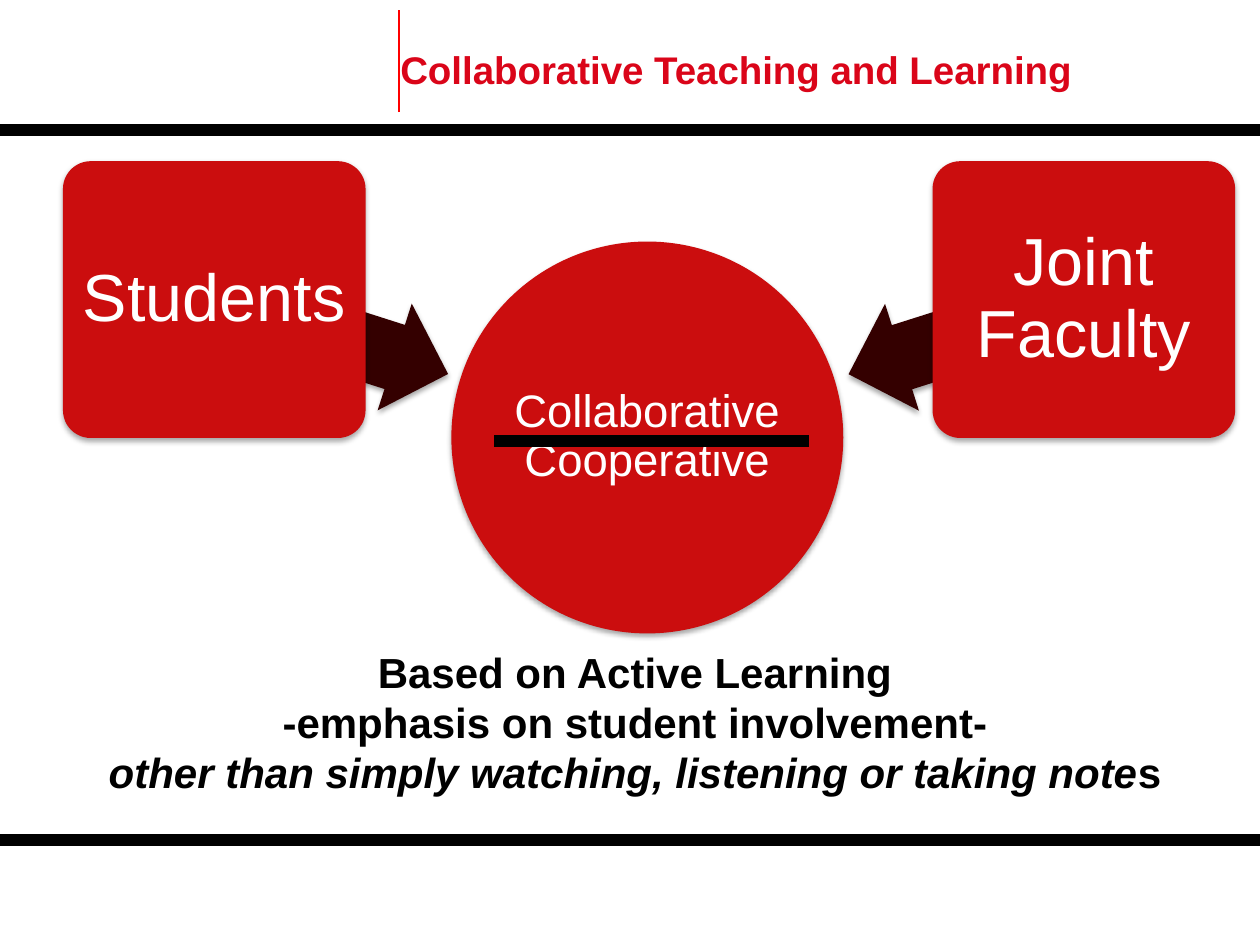
from dataclasses import dataclass

from lxml import etree
from pptx import Presentation
from pptx.dml.color import RGBColor
from pptx.enum.shapes import MSO_CONNECTOR, MSO_SHAPE
from pptx.enum.text import MSO_ANCHOR, PP_ALIGN
from pptx.oxml.ns import qn
from pptx.util import Cm, Pt

STRAIGHT = MSO_CONNECTOR.STRAIGHT
OVAL = MSO_SHAPE.OVAL
ROUND = MSO_SHAPE.ROUNDED_RECTANGLE
ARROW = MSO_SHAPE.LEFT_ARROW
LEFT, CENTER = PP_ALIGN.LEFT, PP_ALIGN.CENTER
TOP, MIDDLE, BOTTOM = MSO_ANCHOR.TOP, MSO_ANCHOR.MIDDLE, MSO_ANCHOR.BOTTOM

RED, DARK, BLACK, WHITE = "CB0D0E", "340000", "000000", "FFFFFF"


@dataclass
class Run:
    text: str
    slant: bool = False


@dataclass
class Rule:
    x1: float
    y1: float
    x2: float
    y2: float
    color: str = BLACK
    width: float = 7


@dataclass
class Node:
    kind: int
    left: float
    top: float
    width: float
    height: float
    fill: str
    adjust: tuple = ()
    turn: float = 0
    text: str = ""
    size: float = 38
    inset: float = 0.2


def paint(color: str) -> RGBColor:
    return RGBColor.from_string(color)


def effects(shape):
    return etree.SubElement(shape._element.spPr, qn("a:effectLst"))


def shade(shape) -> None:
    outer = etree.SubElement(
        effects(shape), qn("a:outerShdw"), blurRad=str(Pt(3.1)),
        dist=str(Pt(1.8)), dir="5400000", rotWithShape="0")
    tint = etree.SubElement(outer, qn("a:srgbClr"), val=BLACK)
    etree.SubElement(tint, qn("a:alpha"), val="35000")


def write(frame, lines, *, size, color, bold=False, align=CENTER,
          anchor=TOP, space=1.0, inset=None) -> None:
    frame.word_wrap = True
    frame.vertical_anchor = anchor
    if inset is not None:
        frame.margin_left = frame.margin_right = Cm(inset)
        frame.margin_top = frame.margin_bottom = Cm(inset)
    for i, line in enumerate(lines):
        para = frame.add_paragraph() if i else frame.paragraphs[0]
        para.alignment = align
        para.line_spacing = space
        for part in line:
            run = para.add_run()
            run.text = part.text
            font = run.font
            font.name, font.size = "Arial", Pt(size)
            font.bold, font.italic = bold, part.slant
            font.color.rgb = paint(color)


def draw_rule(slide, rule: Rule) -> None:
    line = slide.shapes.add_connector(
        STRAIGHT, Cm(rule.x1), Cm(rule.y1), Cm(rule.x2), Cm(rule.y2))
    line.line.color.rgb = paint(rule.color)
    line.line.width = Pt(rule.width)
    effects(line)


def draw_node(slide, node: Node) -> None:
    shape = slide.shapes.add_shape(
        node.kind, Cm(node.left), Cm(node.top), Cm(node.width), Cm(node.height))
    for i, value in enumerate(node.adjust):
        shape.adjustments[i] = value
    shape.rotation = node.turn
    shape.fill.solid()
    shape.fill.fore_color.rgb = paint(node.fill)
    shape.line.fill.background()
    shade(shape)
    if node.text:
        write(shape.text_frame, [[Run(node.text)]], size=node.size, color=WHITE,
              anchor=MIDDLE, space=0.9, inset=node.inset)


def draw_text(slide, box, lines, **style) -> None:
    shape = slide.shapes.add_textbox(*(Cm(side) for side in box))
    write(shape.text_frame, lines, **style)


RULES = [
    Rule(8.05, 2.26, 8.05, 0.2, "FF0000", 1.25),
    Rule(-0.05, 2.62, 25.43, 2.62),
    Rule(0, 16.94, 25.48, 16.94),
]
NODES = [
    Node(OVAL, 9.1, 4.87, 7.9, 7.9, RED,
         text="Collaborative Cooperative", size=26, inset=0.05),
    Node(ARROW, 4.22, 5.66, 4.93, 2.26, DARK, (0.6, 0.5), 197.7),
    Node(ROUND, 1.27, 3.25, 6.1, 5.58, RED, (0.1,), text="Students"),
    Node(ARROW, 16.99, 5.66, 4.98, 2.26, DARK, (0.6, 0.5), 342.4),
    Node(ROUND, 18.8, 3.25, 6.1, 5.58, RED, (0.1,), text="Joint Faculty"),
]
CAPTION = [
    [Run("Based on Active Learning")],
    [Run("-emphasis on student involvement-")],
    [Run("other than simply watching, listening or taking note", True), Run("s")],
]


def main() -> None:
    deck = Presentation()
    deck.slide_width, deck.slide_height = Cm(25.4), Cm(19.05)
    slide = deck.slides.add_slide(deck.slide_layouts[6])
    for rule in RULES:
        draw_rule(slide, rule)
    draw_text(slide, (7.82, 0.43, 15.77, 1.55),
              [[Run("Collaborative Teaching and Learning")]],
              size=22, color="DA0519", bold=True, align=LEFT, anchor=BOTTOM)
    for node in NODES:
        draw_node(slide, node)
    draw_text(slide, (0.2, 12.9, 25.2, 3.33), CAPTION,
              size=24, color=BLACK, bold=True)
    draw_rule(slide, Rule(9.96, 8.89, 16.31, 8.89))
    deck.save("out.pptx")


if __name__ == "__main__":
    main()
